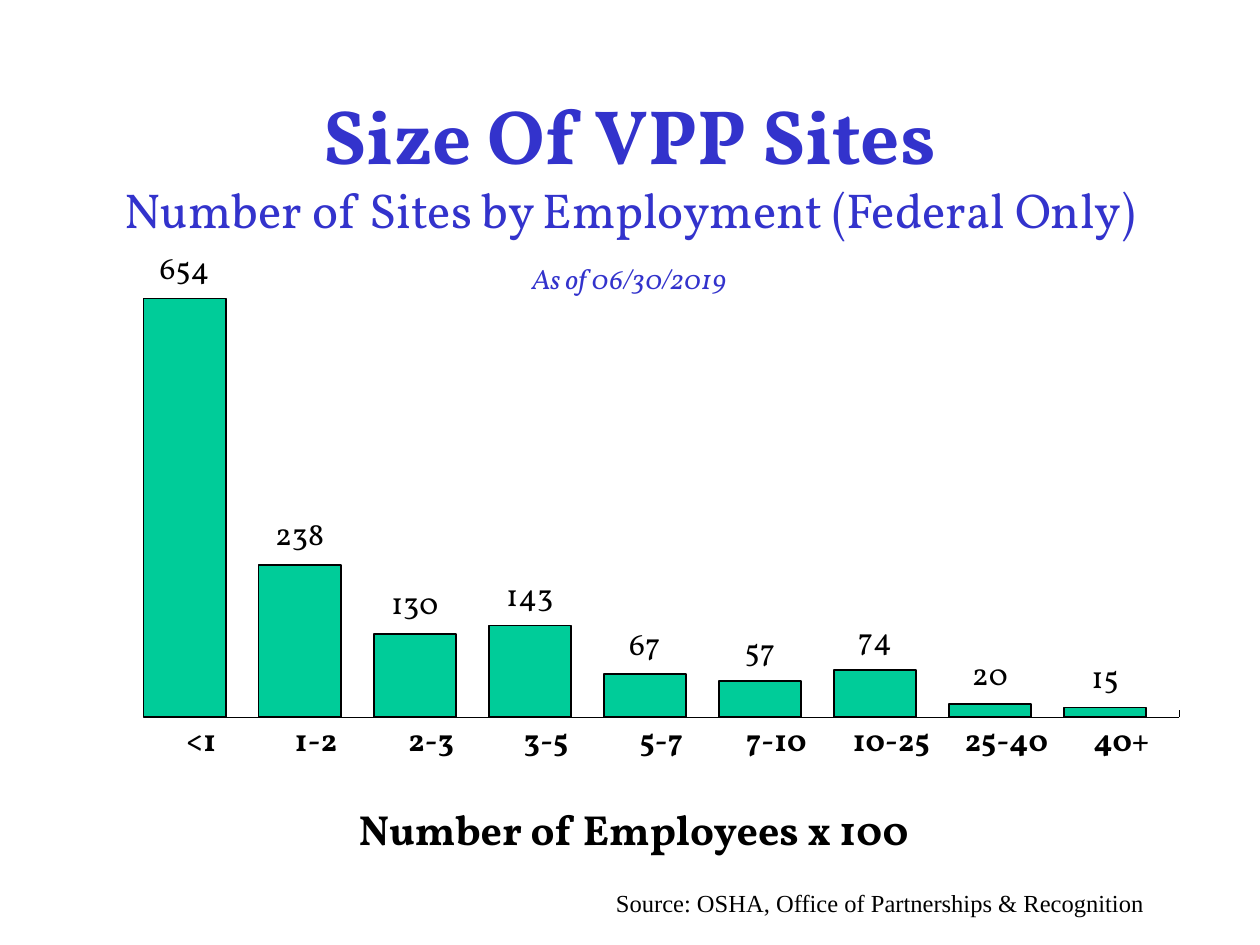
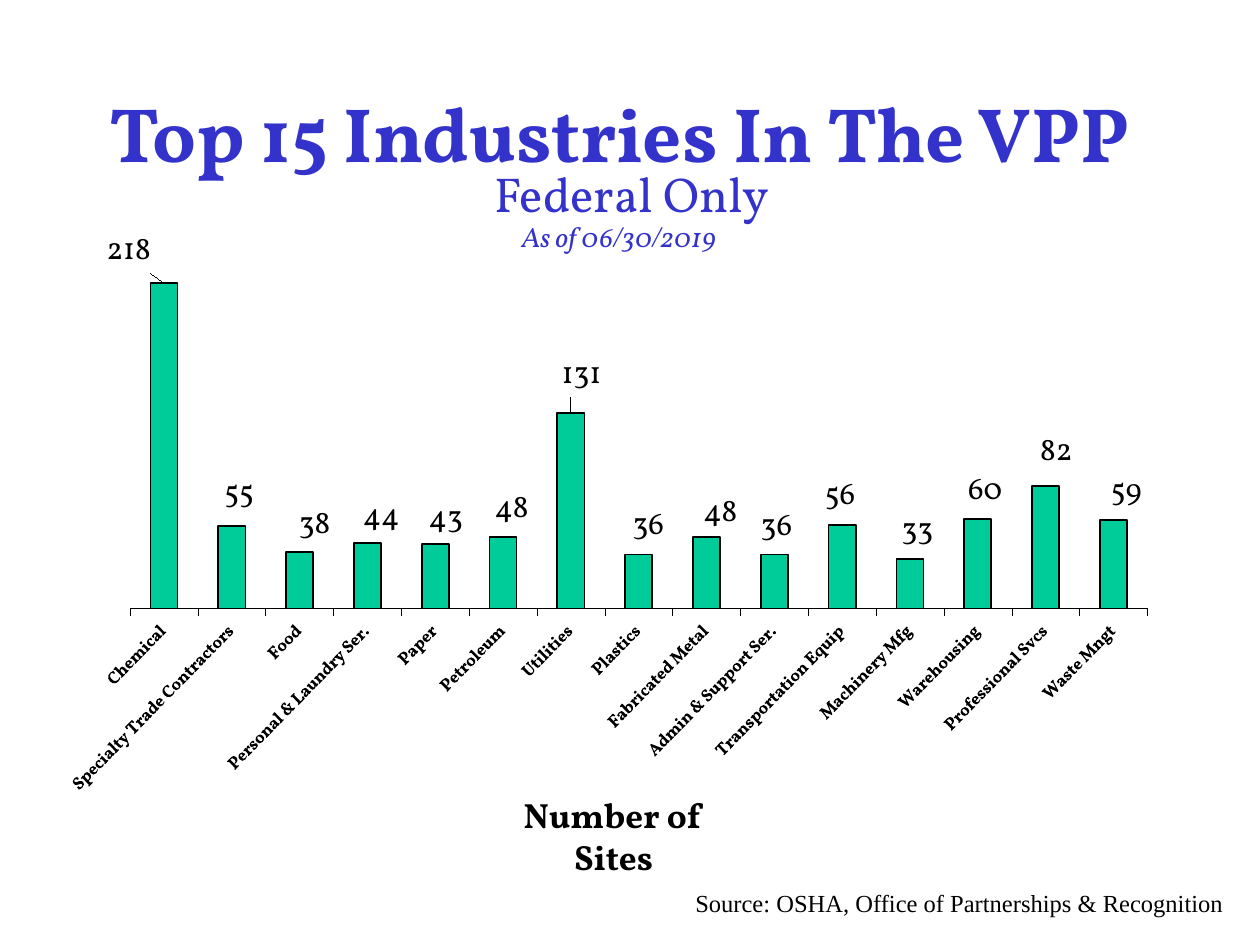
from lxml import etree
from pptx import Presentation
from pptx.chart.data import CategoryChartData
from pptx.dml.color import RGBColor
from pptx.enum.chart import XL_CHART_TYPE as Kind
from pptx.enum.chart import XL_LABEL_POSITION as Spot
from pptx.enum.chart import XL_TICK_LABEL_POSITION as Tick
from pptx.enum.chart import XL_TICK_MARK as Mark
from pptx.enum.text import MSO_ANCHOR as Anchor
from pptx.enum.text import MSO_AUTO_SIZE as Fit
from pptx.enum.text import PP_ALIGN as Align
from pptx.oxml.ns import qn
from pptx.util import Inches, Pt

# Shared look
SERIF, PLAIN = "Vollkorn", "Times New Roman"
BLUE, BLACK, GREEN, PALE = "3333CC", "000000", "00CC99", "CCCCFF"
DATE = "As of 06/30/2019"
SOURCE = "Source: OSHA, Office of Partnerships & Recognition"

SIZES = {"<1": 654, "1-2": 238, "2-3": 130, "3-5": 143, "5-7": 67,
         "7-10": 57, "10-25": 74, "25-40": 20, "40+": 15}

# Industry, number of sites, label shift right and down in inches
TRADES = [
    ("Chemical", 218, -0.29, -0.03),
    ("Specialty Trade Contractors", 55, 0.06, -0.03),
    ("Food", 38, 0.12, 0.01),
    ("Personal & Laundry Ser.", 44, 0.11, 0.02),
    ("Paper", 43, 0.09, 0.02),
    ("Petroleum", 48, 0.07, 0),
    ("Utilities", 131, 0.09, -0.08),
    ("Plastics", 36, 0.08, -0.01),
    ("Fabricated Metal", 48, 0.11, 0.03),
    ("Admin & Support Ser.", 36, 0.02, 0),
    ("Transportation Equip", 56, -0.02, -0.01),
    ("Machinery Mfg", 33, 0.06, 0),
    ("Warehousing", 60, 0.06, 0),
    ("Professional Svcs", 82, 0.09, -0.05),
    ("Waste Mngt", 59, 0.1, 0),
]


def paint(hue):
    return RGBColor.from_string(hue)


def style(font, size, hue=BLACK, face=SERIF, bold=False, slant=False):
    font.size, font.name = Pt(size), face
    font.bold, font.italic = bold, slant
    font.color.rgb = paint(hue)


def add_run(para, text, size, *look, **more):
    run = para.add_run()
    run.text = text
    style(run.font, size, *look, **more)


def add_title(slide, box, lines):
    """Fill the title; lines holds (text, size, bold)."""
    title = slide.shapes.title
    title.left, title.top, title.width, title.height = map(Inches, box)
    frame = title.text_frame
    frame.auto_size, frame.vertical_anchor = Fit.NONE, Anchor.MIDDLE
    para = frame.paragraphs[0]
    para.alignment = Align.CENTER
    for i, (text, size, bold) in enumerate(lines):
        if i:
            para.add_line_break()
        add_run(para, text, size, BLUE, bold=bold)


def add_text(slide, box, text, size, *look, wrap=True, align=Align.LEFT,
             anchor=Anchor.TOP, **more):
    frame = slide.shapes.add_textbox(*map(Inches, box)).text_frame
    frame.word_wrap, frame.vertical_anchor = wrap, anchor
    para = frame.paragraphs[0]
    para.alignment = align
    add_run(para, text, size, *look, **more)


def add_date(slide, left, top):
    add_text(slide, (left, top, 2.83, 0.75), DATE, 16, BLUE, slant=True,
             align=Align.CENTER, anchor=Anchor.MIDDLE)


def add_source(slide, left, width):
    add_text(slide, (left, 7, width, 0.33), SOURCE, 14, face=PLAIN)


def set_layout(parent, index, **items):
    """Insert a manual chart layout into parent at index."""
    for old in parent.findall(qn("c:layout")):
        parent.remove(old)
    layout = etree.Element(qn("c:layout"))
    manual = etree.SubElement(layout, qn("c:manualLayout"))
    for name, value in items.items():
        etree.SubElement(manual, qn("c:" + name)).set("val", str(value))
    parent.insert(index, layout)


def add_bars(slide, box, cats, rows, plot_box, top, gap, overlap):
    """Draw the columns without value axis; return the chart."""
    data = CategoryChartData()
    data.categories = cats
    for i, row in enumerate(rows, 1):
        data.add_series(f"Series {i}", row)
    chart = slide.shapes.add_chart(
        Kind.COLUMN_CLUSTERED, *map(Inches, box), data).chart
    chart.has_legend = chart.has_title = False
    style(chart.font, 18, bold=True)

    plot = chart.plots[0]
    plot.gap_width, plot.overlap = gap, overlap
    plot.vary_by_categories = False
    for series, hue in zip(plot.series, (GREEN, BLUE, PALE)):
        series.format.fill.solid()
        series.format.fill.fore_color.rgb = paint(hue)
        series.format.line.color.rgb = paint(BLACK)
        series.format.line.width = Pt(1)

    labels = plot.series[0].data_labels
    labels.show_value, labels.position = True, Spot.OUTSIDE_END
    style(labels.font, 18)

    axis = chart.value_axis
    axis.minimum_scale, axis.maximum_scale = 0, top
    axis.has_major_gridlines = False
    axis.major_tick_mark = axis.minor_tick_mark = Mark.NONE
    axis.tick_label_position = Tick.NONE
    axis.format.line.fill.background()

    base = chart.category_axis
    base.has_major_gridlines = False
    base.format.line.color.rgb = paint(BLACK)
    base.format.line.width = Pt(0.25)

    x, y, w, h = plot_box
    area = chart.element.find(".//" + qn("c:plotArea"))
    set_layout(area, 0, layoutTarget="inner", xMode="edge", yMode="edge",
               x=x, y=y, w=w, h=h)
    return chart


def nudge(series, box, shifts):
    """Move each value label off its usual place."""
    for i in range(len(shifts)):
        label = series.points[i].data_label
        style(label.font, 18)
        label.position = Spot.OUTSIDE_END
    for item, (right, down) in zip(series.data_labels.element.findall(qn("c:dLbl"))
                                   if hasattr(series.data_labels, "element")
                                   else series._element.iter(qn("c:dLbl")), shifts):
        set_layout(item, 1, x=round(right / box[2], 3),
                   y=round(down / box[3], 3))


def size_slide(slide):
    add_title(slide, (0.75, 0.67, 8.5, 1.25), [
        ("Size Of VPP Sites", 44, True),
        ("Number of Sites by Employment (Federal Only)", 28, False)])
    # Two empty series share each slot with the sites
    blank = [None] * len(SIZES)
    chart = add_bars(slide, (0.98, 1.98, 8.42, 4.4), list(SIZES),
                     [list(SIZES.values()), blank, blank],
                     (0.019, 0.024, 0.976, 0.818), 700, 0, 80)
    axis = chart.category_axis
    axis.major_tick_mark = Mark.INSIDE
    style(axis.tick_labels.font, 18, bold=True)
    add_text(slide, (2.75, 6.33, 4.6, 0.5), "Number of Employees x 100", 24,
             bold=True, wrap=False)
    add_source(slide, 4.79, 5.12)
    add_date(slide, 3.58, 1.83)


def trade_slide(slide):
    add_title(slide, (0.67, 0.42, 8.5, 1.25),
              [("Top 15 Industries In The VPP", 44, True)])
    add_text(slide, (3.77, 6.25, 2.2, 0.77), "Number of Sites", 20,
             bold=True, align=Align.CENTER)
    box = (0.54, 1.81, 8.66, 4.59)
    names, counts, *shifts = zip(*TRADES)
    chart = add_bars(slide, box, names, [counts],
                     (0.037, 0.012, 0.952, 0.646), 250, 150, 0)
    chart.value_axis.visible = False
    nudge(chart.plots[0].series[0], box, list(zip(*shifts)))
    # Slanted industry names
    axis = chart.category_axis
    axis.major_tick_mark = Mark.OUTSIDE
    axis.tick_label_position = Tick.LOW
    style(axis.tick_labels.font, 10, bold=True)
    body = chart.element.find(".//" + qn("c:catAx")).find(
        qn("c:txPr")).find(qn("a:bodyPr"))
    body.set("rot", "-2700000")
    body.set("vert", "horz")
    add_text(slide, (3.83, 1.25, 2.38, 0.57), "Federal Only", 28, BLUE,
             wrap=False)
    add_date(slide, 3.5, 1.5)
    add_source(slide, 5.42, 4.5)


def main():
    deck = Presentation()
    deck.slide_width, deck.slide_height = Inches(10), Inches(7.5)
    for build in (size_slide, trade_slide):
        build(deck.slides.add_slide(deck.slide_layouts[5]))
    deck.save("out.pptx")


if __name__ == "__main__":
    main()
